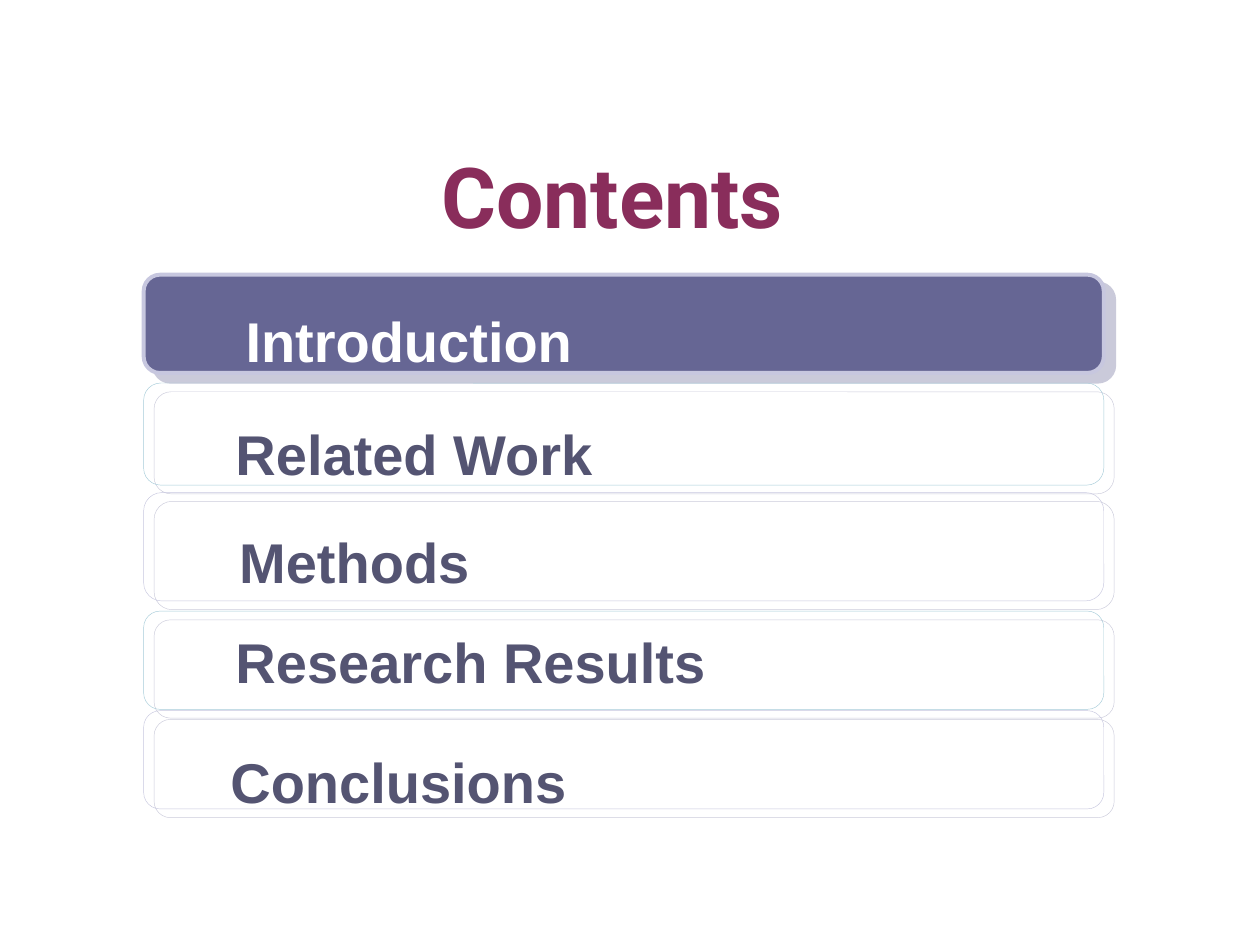
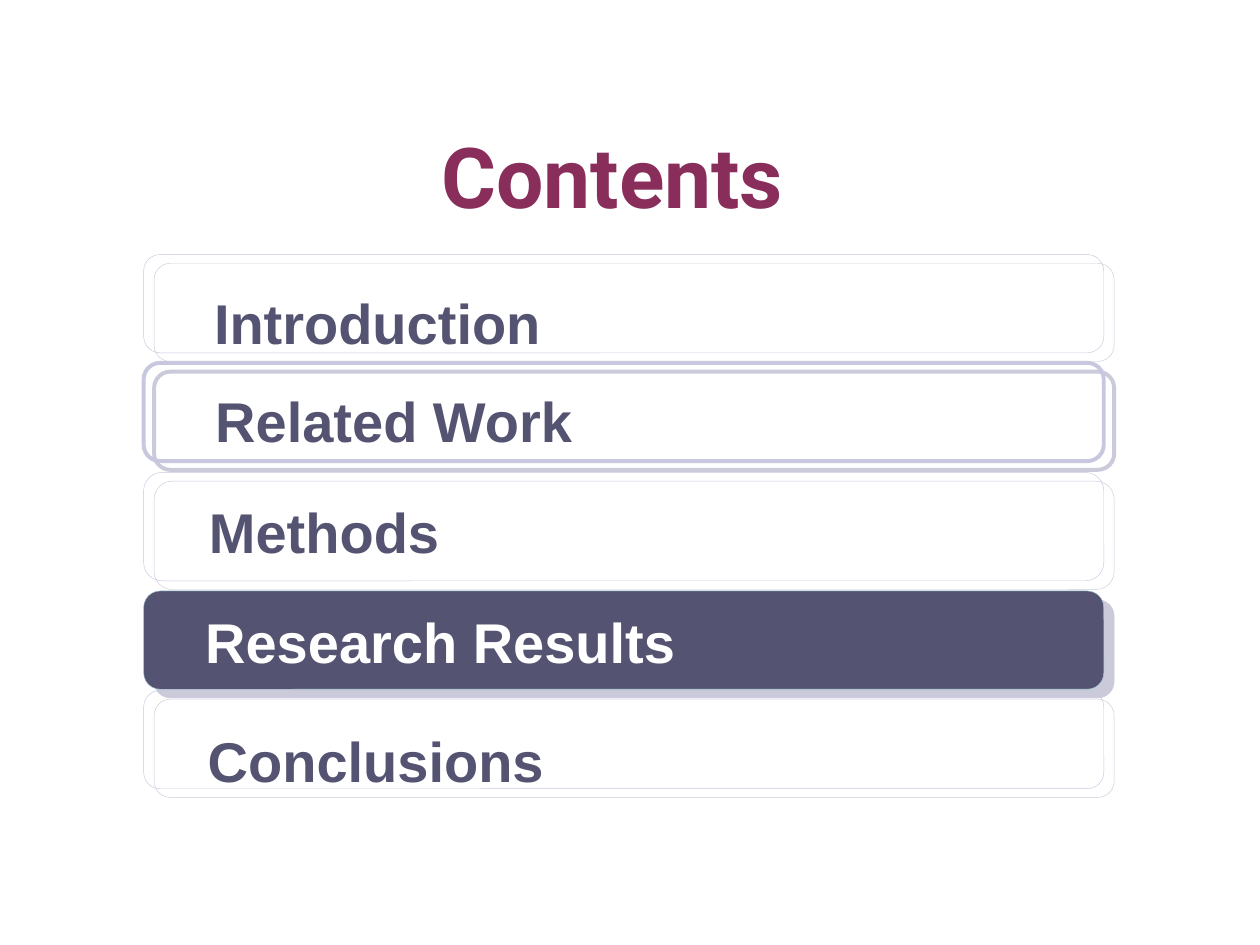
from dataclasses import dataclass

from lxml import etree
from pptx import Presentation
from pptx.dml.color import RGBColor
from pptx.enum.shapes import MSO_SHAPE
from pptx.enum.text import MSO_ANCHOR, MSO_AUTO_SIZE, PP_ALIGN
from pptx.oxml.ns import qn
from pptx.util import Inches, Pt

ROUNDED = MSO_SHAPE.ROUNDED_RECTANGLE
MIDDLE = MSO_ANCHOR.MIDDLE
GROW = MSO_AUTO_SIZE.SHAPE_TO_FIT_TEXT
LEFT, CENTER = PP_ALIGN.LEFT, PP_ALIGN.CENTER


@dataclass(frozen=True)
class Theme:
    background: str = "FFFFFF"
    heading: str = "892D5B"
    label: str = "545472"
    active_label: str = "FFFFFF"
    lilac: str = "C7C7DF"
    aqua: str = "A7CCD9"
    shadow: str = "9797B7"
    heading_font: str = "Roboto"
    body_font: str = "Arial"
    heading_size: float = 48
    label_size: float = 32
    thin: float = 0.25
    thick: float = 2.25


THEME = Theme()
TOPICS = ["Introduction", "Related Work", "Methods", "Research Results", "Conclusions"]
BAR_LEFT, BAR_WIDTH = 1.14, 7.62
BAR_OFFSETS = [0, 0.86, 1.73, 2.67, 3.46]
LABEL_WIDTH, LABEL_HEIGHT = 6.95, 0.63


@dataclass(frozen=True)
class Agenda:
    title_top: float
    first_bar_top: float
    second_bar_height: float
    label_positions: list
    active: int
    active_fill: str
    thick_bar: int
    aqua_bars: tuple

    def bar_heights(self):
        return [0.78, self.second_bar_height, 0.86, 0.78, 0.78]


INTRODUCTION_AGENDA = Agenda(
    title_top=1.15,
    first_bar_top=2.18,
    second_bar_height=0.81,
    label_positions=[(1.85, 2.38), (1.77, 3.28), (1.8, 4.14), (1.77, 4.93), (1.73, 5.88)],
    active=0,
    active_fill="666694",
    thick_bar=0,
    aqua_bars=(1, 3),
)
RESULTS_AGENDA = Agenda(
    title_top=0.99,
    first_bar_top=2.02,
    second_bar_height=0.78,
    label_positions=[(1.6, 2.24), (1.61, 3.02), (1.56, 3.9), (1.53, 4.77), (1.55, 5.72)],
    active=3,
    active_fill="545472",
    thick_bar=1,
    aqua_bars=(3,),
)


def rgb(value):
    return RGBColor.from_string(value)


def style_text(frame, font_name, size, color, alignment):
    for paragraph in frame.paragraphs:
        paragraph.alignment = alignment
        for run in paragraph.runs:
            run.font.name = font_name
            run.font.size = Pt(size)
            run.font.bold = True
            run.font.color.rgb = rgb(color)


def set_title(slide, text, top):
    title = slide.shapes.title
    title.left, title.top = Inches(0.9), Inches(top)
    title.width, title.height = Inches(7.92), Inches(0.79)
    frame = title.text_frame
    frame.text = text
    frame.vertical_anchor = MIDDLE
    style_text(frame, THEME.heading_font, THEME.heading_size, THEME.heading, CENTER)


def cast_shadow(shape):
    shape.shadow.inherit = False
    effects = shape.element.spPr.find(qn("a:effectLst"))
    shadow = etree.SubElement(
        effects, qn("a:outerShdw"), blurRad="0", dist=str(Pt(7.8)),
        dir=str(40 * 60000), algn="ctr", rotWithShape="0",
    )
    color = etree.SubElement(shadow, qn("a:srgbClr"), val=THEME.shadow)
    etree.SubElement(color, qn("a:alpha"), val="50000")


def add_bar(slide, top, height, fill, line_color, line_width):
    bar = slide.shapes.add_shape(
        ROUNDED, Inches(BAR_LEFT), Inches(top), Inches(BAR_WIDTH), Inches(height)
    )
    if fill:
        bar.fill.solid()
        bar.fill.fore_color.rgb = rgb(fill)
    else:
        bar.fill.background()
    bar.line.color.rgb = rgb(line_color)
    bar.line.width = Pt(line_width)
    cast_shadow(bar)


def add_label(slide, text, left, top, color):
    label = slide.shapes.add_textbox(
        Inches(left), Inches(top), Inches(LABEL_WIDTH), Inches(LABEL_HEIGHT)
    )
    frame = label.text_frame
    frame.word_wrap = True
    frame.auto_size = GROW
    frame.text = text
    style_text(frame, THEME.body_font, THEME.label_size, color, LEFT)


def add_agenda_slide(presentation, agenda):
    slide = presentation.slides.add_slide(presentation.slide_layouts[5])
    slide.background.fill.solid()
    slide.background.fill.fore_color.rgb = rgb(THEME.background)
    set_title(slide, "Contents", agenda.title_top)
    for index, (offset, height) in enumerate(zip(BAR_OFFSETS, agenda.bar_heights())):
        add_bar(
            slide,
            agenda.first_bar_top + offset,
            height,
            agenda.active_fill if index == agenda.active else None,
            THEME.aqua if index in agenda.aqua_bars else THEME.lilac,
            THEME.thick if index == agenda.thick_bar else THEME.thin,
        )
    for index, (topic, (left, top)) in enumerate(zip(TOPICS, agenda.label_positions)):
        color = THEME.active_label if index == agenda.active else THEME.label
        add_label(slide, topic, left, top, color)


def main():
    presentation = Presentation()
    presentation.slide_width, presentation.slide_height = Inches(10), Inches(7.5)
    for agenda in (INTRODUCTION_AGENDA, RESULTS_AGENDA):
        add_agenda_slide(presentation, agenda)
    presentation.save("out.pptx")


if __name__ == "__main__":
    main()
